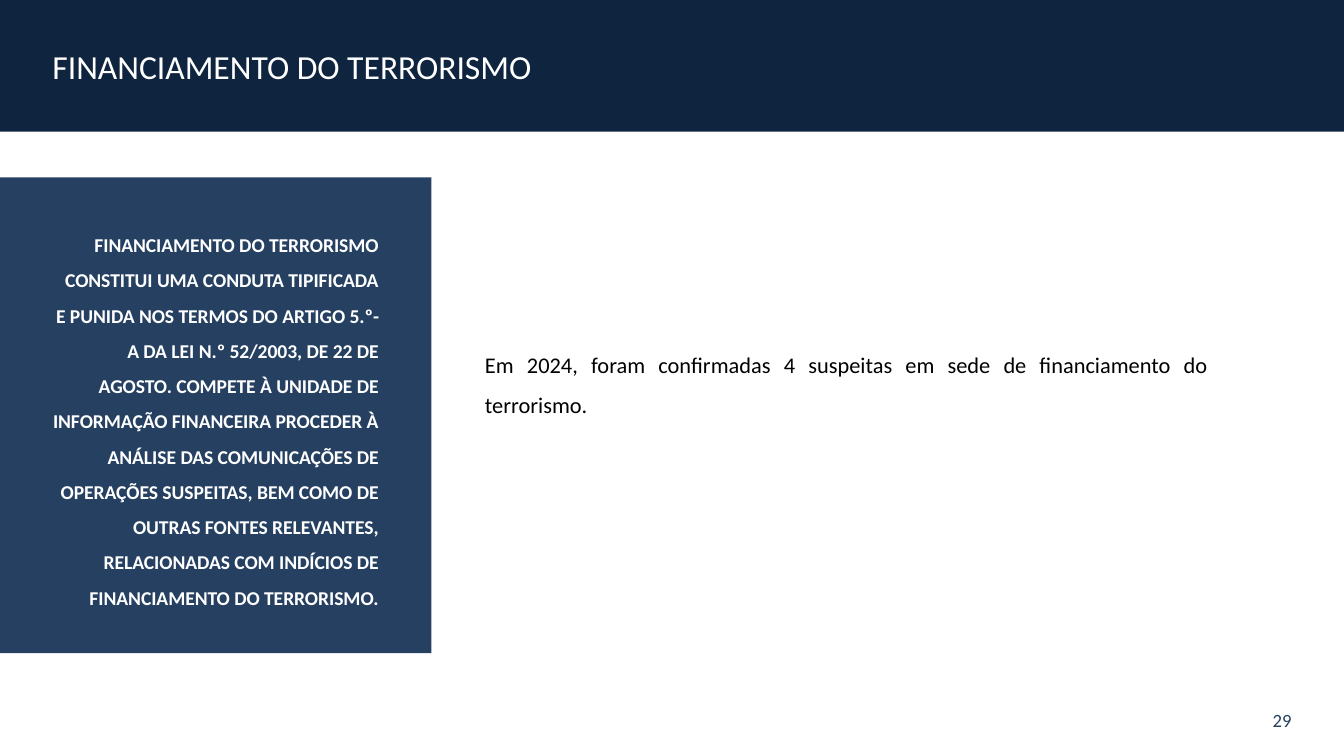
"""Build the slide on terrorism financing: title bar, side panel, finding and page number."""
from dataclasses import dataclass

from pptx import Presentation
from pptx.dml.color import RGBColor
from pptx.enum.shapes import MSO_SHAPE as Shape
from pptx.enum.text import MSO_ANCHOR as Anchor, MSO_AUTO_SIZE as AutoSize, PP_ALIGN as Align
from pptx.util import Inches, Pt


@dataclass(frozen=True)
class Theme:
    font: str = "Calibri"
    navy: str = "0F243E"
    blue: str = "254061"
    white: str = "FFFFFF"
    black: str = "000000"
    title: float = 18
    body: float = 12
    panel: float = 10.5
    number: float = 10


THEME = Theme()
WIDTH = 10
HEIGHT = WIDTH * 9 / 16

BLOCKS = [
    dict(kind="title", text="FINANCIAMENTO DO TERRORISMO",
         at=(0, 0, WIDTH, 0.98), inset=(0.39, 0.2), anchor=Anchor.MIDDLE,
         fill=THEME.navy, color=THEME.white, size=THEME.title, bold=False,
         align=Align.LEFT, spacing=1.0),
    dict(kind="text", text="29",
         at=(WIDTH - 1.41, 5.21, 1.41, 0.3), inset=(0.39, 0.1), anchor=Anchor.MIDDLE,
         fill=None, color=THEME.blue, size=THEME.number, bold=False,
         align=Align.RIGHT, spacing=1.0),
    dict(kind="text",
         text="Em 2024, foram confirmadas 4 suspeitas em sede de financiamento do terrorismo.",
         at=(3.51, 2.46, 5.58, 0.68), inset=(0.1, 0.05), anchor=Anchor.TOP,
         fill=None, color=THEME.black, size=THEME.body, bold=False,
         align=Align.JUSTIFY, spacing=1.5),
    dict(kind="panel",
         text="FINANCIAMENTO DO TERRORISMO CONSTITUI UMA CONDUTA TIPIFICADA E PUNIDA "
              "NOS TERMOS DO ARTIGO 5.º-A DA LEI N.º 52/2003, DE 22 DE AGOSTO. COMPETE À "
              "UNIDADE DE INFORMAÇÃO FINANCEIRA PROCEDER À ANÁLISE DAS COMUNICAÇÕES DE "
              "OPERAÇÕES SUSPEITAS, BEM COMO DE OUTRAS FONTES RELEVANTES, RELACIONADAS "
              "COM INDÍCIOS DE FINANCIAMENTO DO TERRORISMO.",
         at=(0, 1.32, 3.21, 3.54), inset=(0.39, 0.1), anchor=Anchor.MIDDLE,
         fill=THEME.blue, color=THEME.white, size=THEME.panel, bold=True,
         align=Align.RIGHT, spacing=1.5),
]


def set_all(target, values):
    for name, value in values.items():
        setattr(target, name, value)


def make_box(page, kind, at):
    left, top, width, height = map(Inches, at)
    if kind == "title":
        box = page.shapes.title
        set_all(box, dict(left=left, top=top, width=width, height=height))
    elif kind == "panel":
        box = page.shapes.add_shape(Shape.RECTANGLE, left, top, width, height)
        box.shadow.inherit = False
    else:
        box = page.shapes.add_textbox(left, top, width, height)
    return box


def add_block(page, block):
    box = make_box(page, block["kind"], block["at"])
    if block["fill"]:
        box.fill.solid()
        box.fill.fore_color.rgb = RGBColor.from_string(block["fill"])
        box.line.fill.background()
    side, edge = map(Inches, block["inset"])
    frame = box.text_frame
    set_all(frame, dict(word_wrap=True, auto_size=AutoSize.NONE,
                        vertical_anchor=block["anchor"], margin_left=side,
                        margin_right=side, margin_top=edge, margin_bottom=edge))
    para = frame.paragraphs[0]
    set_all(para, dict(alignment=block["align"], line_spacing=block["spacing"]))
    span = para.add_run()
    span.text = block["text"]
    set_all(span.font, dict(name=THEME.font, size=Pt(block["size"]), bold=block["bold"]))
    span.font.color.rgb = RGBColor.from_string(block["color"])


def main():
    deck = Presentation()
    set_all(deck, dict(slide_width=Inches(WIDTH), slide_height=Inches(HEIGHT)))
    page = deck.slides.add_slide(deck.slide_layouts.get_by_name("Title Only"))
    for block in BLOCKS:
        add_block(page, block)
    deck.save("out.pptx")


if __name__ == "__main__":
    main()
